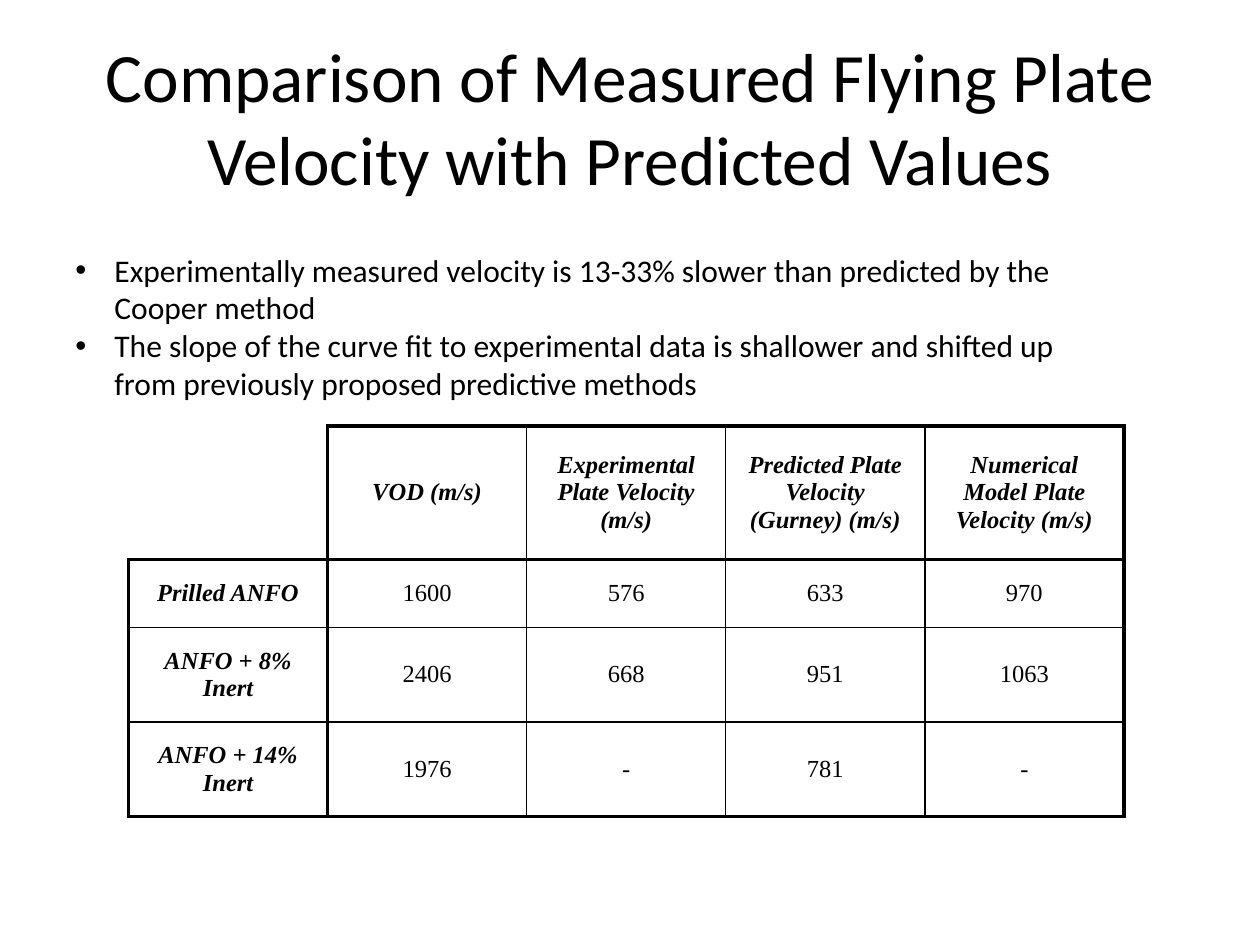
from lxml.etree import SubElement
from pptx import Presentation
from pptx.dml.color import RGBColor
from pptx.enum.text import MSO_ANCHOR, MSO_AUTO_SIZE, PP_ALIGN
from pptx.oxml.ns import qn
from pptx.util import Inches, Pt

COLORS = {"text": "000000", "border": "000000"}
THIN, HEAVY = Pt(1), Pt(2.25)


def format_paragraph(para, font_name, size, strong=False):
    para.font.name = font_name
    para.font.size = Pt(size)
    para.font.bold = para.font.italic = strong
    para.font.color.rgb = RGBColor.from_string(COLORS["text"])


def set_borders(cell, widths):
    """Draw the left, right, top and bottom borders; None means no line."""
    properties = cell._tc.get_or_add_tcPr()
    for position, (side, width) in enumerate(zip("LRTB", widths)):
        line = properties.makeelement(qn(f"a:ln{side}"), {"w": str(width or 0)})
        if width:
            fill = SubElement(line, qn("a:solidFill"))
            SubElement(fill, qn("a:srgbClr"), val=COLORS["border"])
        else:
            SubElement(line, qn("a:noFill"))
        properties.insert(position, line)


deck = Presentation()
deck.slide_width, deck.slide_height = Inches(10), Inches(7.5)
slide = deck.slides.add_slide(deck.slide_layouts[5])

# Title
title = slide.shapes.title
title.left, title.top = Inches(0.5), Inches(0.3)
title.width, title.height = Inches(9), Inches(1.25)
title.text_frame.text = "Comparison of Measured Flying Plate Velocity with Predicted Values"
title.text_frame.auto_size = MSO_AUTO_SIZE.NONE
title.text_frame.vertical_anchor = MSO_ANCHOR.MIDDLE
title.text_frame.paragraphs[0].alignment = PP_ALIGN.CENTER
format_paragraph(title.text_frame.paragraphs[0], "Calibri", 39.6)

# Findings
findings = [
    "Experimentally measured velocity is 13-33% slower than predicted by the Cooper method",
    "The slope of the curve fit to experimental data is shallower and shifted up "
    "from previously proposed predictive methods",
]
box = slide.shapes.add_textbox(Inches(0.5), Inches(1.94), Inches(8.47), Inches(1.31))
frame = box.text_frame
frame.word_wrap = True
frame.auto_size = MSO_AUTO_SIZE.SHAPE_TO_FIT_TEXT
for index, finding in enumerate(findings):
    para = frame.add_paragraph() if index else frame.paragraphs[0]
    para.text = finding
    indent = para._p.get_or_add_pPr()
    indent.set("marL", str(Inches(0.31)))
    indent.set("indent", str(-Inches(0.31)))
    SubElement(indent, qn("a:buFont"), typeface="Arial")
    SubElement(indent, qn("a:buChar"), char="•")
    format_paragraph(para, "Calibri", 18)

# Velocity table
rows = [
    ["", "VOD (m/s)", "Experimental Plate Velocity (m/s)",
     "Predicted Plate Velocity (Gurney) (m/s)", "Numerical Model Plate Velocity (m/s)"],
    ["Prilled ANFO", "1600", "576", "633", "970"],
    ["ANFO + 8% Inert", "2406", "668", "951", "1063"],
    ["ANFO + 14% Inert", "1976", "-", "781", "-"],
]
row_heights = [1.06, 0.54, 0.75, 0.75]
last_row, last_column = len(rows) - 1, len(rows[0]) - 1
table = slide.shapes.add_table(
    len(rows), len(rows[0]), Inches(1.02), Inches(3.38), Inches(7.91), Inches(3.09)
).table
table.first_row = table.horz_banding = False
for column in table.columns:
    column.width = Inches(1.58)

for row_index, values in enumerate(rows):
    table.rows[row_index].height = Inches(row_heights[row_index])
    for column_index, value in enumerate(values):
        cell = table.cell(row_index, column_index)
        cell.fill.background()
        cell.vertical_anchor = MSO_ANCHOR.MIDDLE
        cell.text = value
        para = cell.text_frame.paragraphs[0]
        para.alignment = PP_ALIGN.CENTER
        is_header = row_index == 0 or column_index == 0
        format_paragraph(para, "Times New Roman", 14, strong=is_header)

        # Heavy lines frame the headers and the body; the corner is open
        is_corner = row_index == column_index == 0
        set_borders(cell, [
            None if is_corner else HEAVY if column_index <= 1 else THIN,
            HEAVY if column_index in (0, last_column) else THIN,
            None if is_corner else HEAVY if row_index <= 1 else THIN,
            HEAVY if row_index in (0, last_row) else THIN,
        ])

deck.save("out.pptx")
